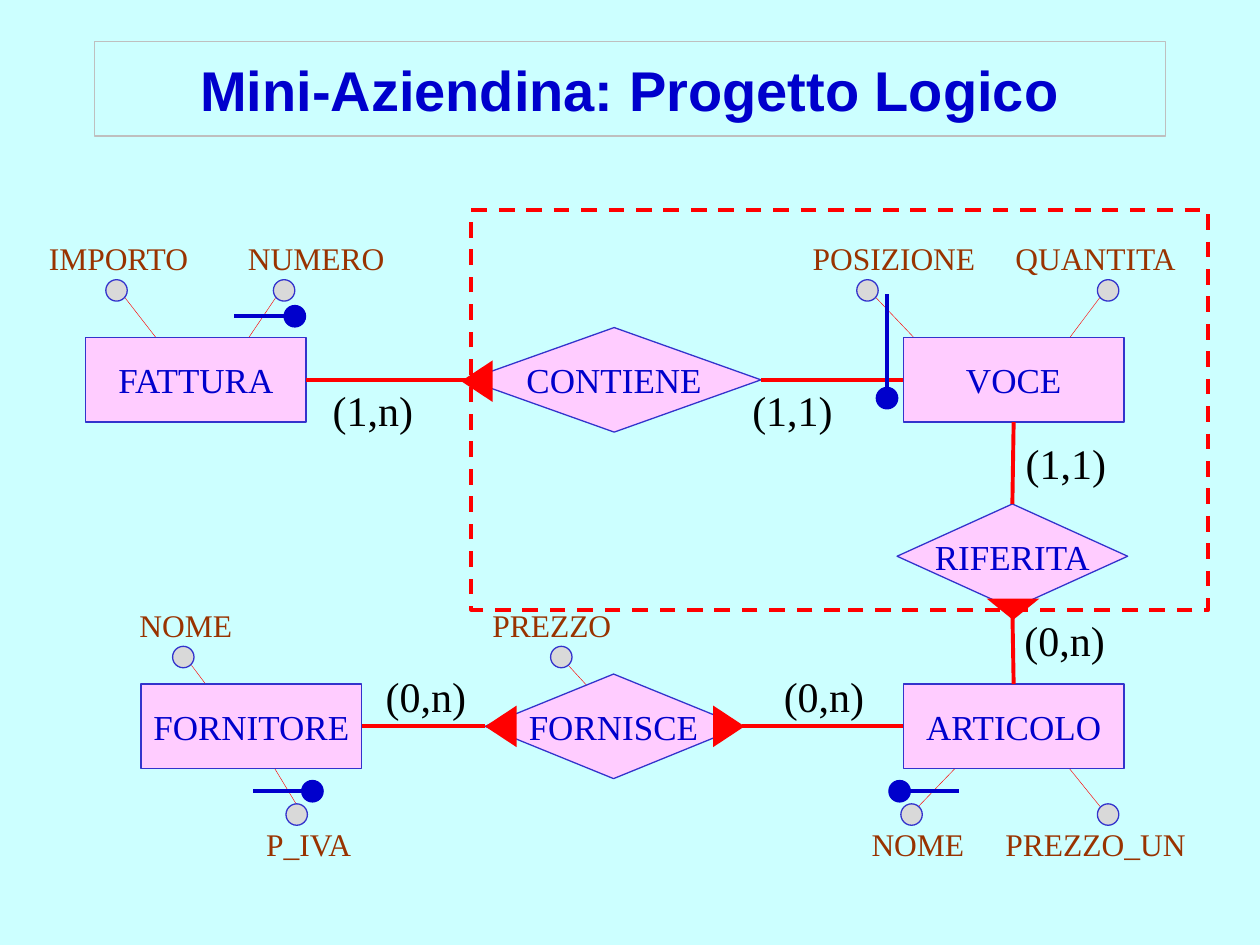
"""Build the entity-relationship slide of the Mini-Aziendina logical design."""
from lxml import etree
from pptx import Presentation
from pptx.dml.color import RGBColor
from pptx.enum.dml import MSO_LINE
from pptx.enum.shapes import MSO_CONNECTOR, MSO_SHAPE
from pptx.enum.text import MSO_ANCHOR, PP_ALIGN
from pptx.oxml.ns import qn
from pptx.util import Inches, Pt

RECTANGLE = MSO_SHAPE.RECTANGLE
DIAMOND = MSO_SHAPE.DIAMOND
OVAL = MSO_SHAPE.OVAL
TRIANGLE = MSO_SHAPE.ISOSCELES_TRIANGLE
STRAIGHT = MSO_CONNECTOR.STRAIGHT
DASH = MSO_LINE.DASH
MIDDLE = MSO_ANCHOR.MIDDLE
CENTER = PP_ALIGN.CENTER
TOP, LEFT, BOTTOM, RIGHT = range(4)

BACKGROUND = RGBColor(0xCC, 0xFF, 0xFF)
PINK = RGBColor(0xFF, 0xCC, 0xFF)
OUTLINE = RGBColor(0x33, 0x33, 0xCC)
BLUE = RGBColor(0x00, 0x00, 0xCC)
RED = RGBColor(0xFF, 0x00, 0x00)
BROWN = RGBColor(0x99, 0x33, 0x00)
BLACK = RGBColor(0x00, 0x00, 0x00)
GREY = RGBColor(0xD9, 0xD9, 0xD9)
TITLE_LINE = RGBColor(0xBF, 0xBF, 0xBF)

SERIF = "Times New Roman"
DOT = 0.17

ENTITIES = {
    "FATTURA": (0.68, 2.68),
    "VOCE": (7.17, 2.68),
    "FORNITORE": (1.12, 5.43),
    "ARTICOLO": (7.17, 5.43),
}
RELATIONS = {
    "CONTIENE": (3.71, 2.6, 2.33),
    "RIFERITA": (7.12, 4, 1.83),
    "FORNISCE": (3.85, 5.35, 2.04),
}
LINKS = [
    ("FATTURA", RIGHT, "CONTIENE", LEFT),
    ("VOCE", LEFT, "CONTIENE", RIGHT),
    ("VOCE", BOTTOM, "RIFERITA", TOP),
    ("RIFERITA", BOTTOM, "ARTICOLO", TOP),
    ("ARTICOLO", LEFT, "FORNISCE", RIGHT),
    ("FORNISCE", LEFT, "FORNITORE", RIGHT),
]
ATTRIBUTES = [
    ("IMPORTO", (0.28, 1.85, 1.32), (0.84, 2.22), (0.99, 2.36), (1.3, 2.76)),
    ("NUMERO", (1.86, 1.85, 1.3), (2.17, 2.22), (2.19, 2.36), (1.92, 2.76)),
    ("POSIZIONE", (6.34, 1.85, 1.51), (6.8, 2.22), (6.95, 2.36), (7.52, 2.96)),
    ("QUANTITA", (7.95, 1.85, 1.49), (8.71, 2.22), (8.73, 2.36), (8.31, 2.92)),
    ("NOME", (1, 4.76, 0.95), (1.37, 5.13), (1.52, 5.28), (1.85, 5.72)),
    ("PREZZO", (3.8, 4.76, 1.16), (4.37, 5.13), (4.51, 5.28), (4.84, 5.64)),
    ("P_IVA", (2.01, 6.5, 0.88), (2.27, 6.38), (2.35, 6.38), (2.09, 5.95)),
    ("NOME", (6.81, 6.5, 0.95), (7.15, 6.38), (7.29, 6.4), (7.79, 5.88)),
    ("PREZZO_UN", (7.87, 6.5, 1.65), (8.71, 6.38), (8.73, 6.4), (8.31, 5.88)),
]
CARDINALITIES = [
    ("(1,n)", 2.54, 3),
    ("(1,1)", 5.87, 3),
    ("(1,1)", 8.04, 3.42),
    ("(0,n)", 8.03, 4.83),
    ("(0,n)", 2.96, 5.27),
    ("(0,n)", 6.12, 5.27),
]
KEYS = [
    ((2.34, 2.51), (1.86, 2.51)),
    ((7.04, 3.16), (7.04, 2.33)),
    ((2.48, 6.28), (2.01, 6.28)),
    ((7.14, 6.28), (7.61, 6.28)),
]
ARROWS = [
    ((3.62, 2.9, 0.33, 0.25), 270),
    ((7.83, 4.75, 0.42, 0.17), 180),
    ((3.81, 5.64, 0.33, 0.25), 270),
    ((5.62, 5.64, 0.33, 0.25), 90),
]


def write_text(shape, text, size, color, font=SERIF, bold=False, wrap=False):
    """Put one centred line of text in a shape."""
    frame = shape.text_frame
    frame.text = text
    frame.word_wrap = wrap
    para = frame.paragraphs[0]
    para.alignment = CENTER
    span = para.runs[0]
    span.font.size = Pt(size)
    span.font.name = font
    span.font.bold = bold
    span.font.color.rgb = color


def add_figure(page, kind, box, fill=None, line=None, width=0.75):
    """Add a preset shape without shadow; no colour means no fill or line."""
    shape = page.shapes.add_shape(kind, *map(Inches, box))
    shape.shadow.inherit = False
    if fill is None:
        shape.fill.background()
    else:
        shape.fill.solid()
        shape.fill.fore_color.rgb = fill
    if line is None:
        shape.line.fill.background()
    else:
        shape.line.color.rgb = line
        shape.line.width = Pt(width)
    return shape


def add_line(page, start, end, color, width):
    """Add a straight line between two points."""
    line = page.shapes.add_connector(STRAIGHT, *map(Inches, start + end))
    line.line.color.rgb = color
    line.line.width = Pt(width)
    etree.SubElement(line._element.spPr, qn("a:effectLst"))
    return line


def add_label(page, text, box, size, color):
    """Add a free-standing label."""
    label = page.shapes.add_textbox(*map(Inches, box))
    write_text(label, text, size, color)


def add_node(page, kind, name, box):
    """Add a named entity or relation."""
    node = add_figure(page, kind, box, PINK, OUTLINE)
    write_text(node, name, 20, BLUE)
    node.text_frame.vertical_anchor = MIDDLE
    return node


def add_link(page, first, first_side, second, second_side):
    """Join two nodes with a thick red line."""
    link = add_line(page, (0, 0), (0, 0), RED, 2.25)
    link.begin_connect(first, first_side)
    link.end_connect(second, second_side)


def add_key(page, start, end):
    """Add an identifier bar with its dot at the start."""
    add_line(page, start, end, BLUE, 2.25)
    left, top = (middle - DOT / 2 for middle in start)
    add_figure(page, OVAL, (left, top, DOT, DOT), BLUE, BLUE)


def add_title(page, text):
    """Add the framed slide title."""
    title = add_figure(page, RECTANGLE, (0.75, 0.33, 8.5, 0.75), line=TITLE_LINE)
    write_text(title, text, 32, BLUE, "Arial", bold=True, wrap=True)
    title.text_frame.vertical_anchor = MIDDLE


def main():
    """Draw the diagram from back to front and save it."""
    deck = Presentation()
    deck.slide_width, deck.slide_height = Inches(10), Inches(7.5)
    page = deck.slides.add_slide(deck.slide_layouts[6])
    page.background.fill.solid()
    page.background.fill.fore_color.rgb = BACKGROUND

    add_title(page, "Mini-Aziendina: Progetto Logico")
    for name, (left, top, width), _, start, end in ATTRIBUTES:
        add_line(page, start, end, RED, 0.25)
        add_label(page, name, (left, top, width, 0.4), 18, BROWN)
    for text, left, top in CARDINALITIES:
        add_label(page, text, (left, top, 0.84, 0.5), 24, BLACK)

    nodes = {}
    for name, (left, top) in ENTITIES.items():
        nodes[name] = add_node(page, RECTANGLE, name, (left, top, 1.75, 0.67))
    for name, (left, top, width) in RELATIONS.items():
        nodes[name] = add_node(page, DIAMOND, name, (left, top, width, 0.83))
    for first, first_side, second, second_side in LINKS:
        add_link(page, nodes[first], first_side, nodes[second], second_side)

    for _, _, corner, _, _ in ATTRIBUTES:
        add_figure(page, OVAL, corner + (DOT, DOT), GREY, OUTLINE)
    for start, end in KEYS:
        add_key(page, start, end)

    frame = add_figure(page, RECTANGLE, (3.74, 1.67, 5.85, 3.17), line=RED, width=2.25)
    frame.line.dash_style = DASH
    for box, turn in ARROWS:
        add_figure(page, TRIANGLE, box, RED).rotation = turn
    deck.save("out.pptx")


if __name__ == "__main__":
    main()
